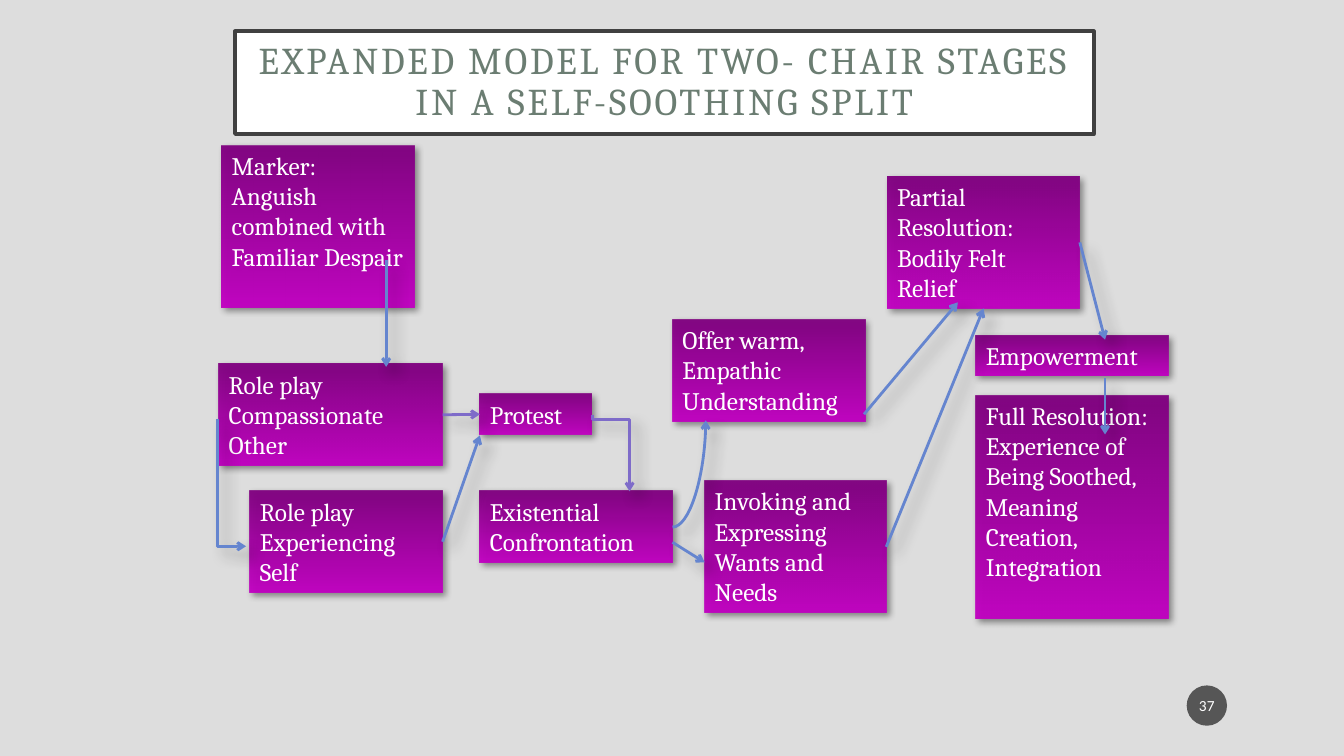
from lxml import etree
from pptx import Presentation
from pptx.dml.color import RGBColor
from pptx.enum.shapes import MSO_CONNECTOR, MSO_SHAPE
from pptx.enum.text import MSO_ANCHOR, MSO_AUTO_SIZE, PP_ALIGN
from pptx.oxml.ns import qn
from pptx.util import Inches, Pt

RECT, OVAL = MSO_SHAPE.RECTANGLE, MSO_SHAPE.OVAL
LINE, ELBOW, CURVE = MSO_CONNECTOR.STRAIGHT, MSO_CONNECTOR.ELBOW, MSO_CONNECTOR.CURVE
MID, TOP = MSO_ANCHOR.MIDDLE, MSO_ANCHOR.TOP
LEFT, CENTER = PP_ALIGN.LEFT, PP_ALIGN.CENTER
FIXED = MSO_AUTO_SIZE.NONE
LEFT_SIDE, RIGHT_SIDE, BOTTOM = 1, 3, 2

HEX = {"back": "DDDDDD", "white": "FFFFFF", "frame": "404040", "title": "6B7D72",
       "dark": "800080", "light": "C100C1", "blue": "6585CF", "violet": "7E6BC9",
       "badge": "1D1D1D", "shadow": "000000"}
RGB = {name: RGBColor.from_string(code) for name, code in HEX.items()}


def write(shape, text, size, color, font, align, anchor, pad):
    """Fill a shape with one formatted paragraph; pad is (side, end) in inches."""
    frame = shape.text_frame
    frame.text = text
    side, end = (Inches(p) for p in pad)
    looks = {"word_wrap": True, "auto_size": FIXED, "vertical_anchor": anchor,
             "margin_left": side, "margin_right": side,
             "margin_top": end, "margin_bottom": end}
    for key, value in looks.items():
        setattr(frame, key, value)
    para = frame.paragraphs[0]
    para.alignment = align
    run = para.runs[0]
    for key, value in {"name": font, "size": Pt(size), "bold": False}.items():
        setattr(run.font, key, value)
    run.font.color.rgb = RGB[color]
    return para


def shade(shape, alpha, blur, dist):
    """Cast a soft shadow down to the right; blur and dist are in points."""
    effects = etree.SubElement(shape._element.spPr, qn("a:effectLst"))
    outer = etree.SubElement(effects, qn("a:outerShdw"), blurRad=str(Pt(blur)),
                             dist=str(Pt(dist)), dir="2700000", algn="tl", rotWithShape="0")
    color = etree.SubElement(outer, qn("a:srgbClr"), val=HEX["shadow"])
    etree.SubElement(color, qn("a:alpha"), val=str(alpha * 1000))


deck = Presentation()
deck.slide_width, deck.slide_height = Inches(13.33), Inches(7.5)
slide = deck.slides.add_slide(deck.slide_layouts[5])
slide.background.fill.solid()
slide.background.fill.fore_color.rgb = RGB["back"]
shapes = slide.shapes

# Title
title = shapes.title
place = {"left": 2.33, "top": 0.31, "width": 8.52, "height": 1.02}
for key, value in place.items():
    setattr(title, key, Inches(value))
title.fill.solid()
title.fill.fore_color.rgb = RGB["white"]
title.line.color.rgb = RGB["frame"]
title.line.width = Pt(2.5)
para = write(title, "EXPANDED MODEL FOR TWO- CHAIR STAGES IN A SELF-SOOTHING SPLIT",
             27, "title", "Cambria", CENTER, MID, (0.2, 0.2))
para.line_spacing = 0.9
para.runs[0].font._element.set("spc", "200")

# Stage boxes: left, top, width, height, text
stages = {
    "marker": (2.2, 1.44, 1.91, 1.61, "Marker: Anguish combined with Familiar Despair"),
    "other": (2.17, 3.61, 2.22, 1.01, "Role play Compassionate Other"),
    "needs": (6.99, 4.77, 1.8, 1.31, "Invoking and Expressing Wants and Needs"),
    "full": (9.68, 3.92, 1.91, 2.22,
             "Full Resolution: Experience of Being Soothed, Meaning Creation, Integration"),
    "self": (2.48, 4.87, 1.91, 1.01, "Role play Experiencing Self"),
    "offer": (6.67, 3.17, 1.91, 1.01, "Offer warm, Empathic Understanding"),
    "power": (9.68, 3.33, 1.91, 0.4, "Empowerment"),
    "partial": (8.8, 1.75, 1.91, 1.31, "Partial Resolution: Bodily Felt Relief"),
    "exist": (4.76, 4.87, 1.91, 0.71, "Existential Confrontation"),
    "protest": (4.76, 3.91, 1.11, 0.4, "Protest"),
}
boxes = {}
for name, (*spot, text) in stages.items():
    box = boxes[name] = shapes.add_shape(RECT, *map(Inches, spot))
    box.fill.gradient()
    box.fill.gradient_angle = 270
    for stop, color, pos in zip(box.fill.gradient_stops, ("dark", "light"), (0, 0.97)):
        stop.color.rgb = RGB[color]
        stop.position = pos
    for color in box._element.spPr.iter(qn("a:srgbClr")):
        etree.SubElement(color, qn("a:alpha"), val="95000")
    box.line.fill.background()
    shade(box, 43, 5, 3)
    write(box, text, 18, "white", "Cambria", LEFT, TOP, (0.1, 0.05))

# Straight arrows: start, end, colour, joined start, joined end
arrows = [
    ((4.39, 5.38), (4.76, 4.32), "blue", ("self", RIGHT_SIDE), None),
    ((3.83, 2.58), (3.83, 3.64), "blue", None, None),
    ((4.39, 4.11), (4.76, 4.11), "violet", ("other", RIGHT_SIDE), ("protest", LEFT_SIDE)),
    ((6.67, 5.38), (6.99, 5.58), "blue", None, None),
    ((8.79, 5.43), (9.75, 3.06), "blue", ("needs", RIGHT_SIDE), ("partial", BOTTOM)),
    ((8.57, 4.11), (9.5, 3), "blue", None, None),
    ((10.71, 2.41), (10.96, 3.37), "blue", ("partial", RIGHT_SIDE), None),
    ((10.96, 3.75), (10.96, 4.31), "blue", None, None),
]
links = []
for start, end, color, tail, head in arrows:
    link = shapes.add_connector(LINE, *map(Inches, start + end))
    if tail:
        link.begin_connect(boxes[tail[0]], tail[1])
    if head:
        link.end_connect(boxes[head[0]], head[1])
    links.append((link, color))

# Bent and curved arrows: kind, left, top, width, height, colour, preset, turn, bend
bends = [
    (ELBOW, 1.67, 4.65, 1.26, 0.28, "blue", "bentConnector2",
     {"rot": "16200000", "flipH": "1"}, None),
    (ELBOW, 5.68, 4.31, 0.76, 0.37, "violet", "bentConnector3",
     {"rot": "16200000", "flipH": "1"}, 6000),
    (CURVE, 6.67, 4.17, 0.33, 1.06, "blue", "curvedConnector2", {"flipV": "1"}, None),
]
for kind, x, y, w, h, color, preset, turn, bend in bends:
    link = shapes.add_connector(kind, *map(Inches, (x, y, x + w, y + h)))
    props = link._element.spPr
    props.find(qn("a:xfrm")).attrib.update(turn)
    shape = props.find(qn("a:prstGeom"))
    shape.set("prst", preset)
    if bend:
        etree.SubElement(shape.find(qn("a:avLst")), qn("a:gd"), name="adj1", fmla=f"val {bend}")
    links.append((link, color))

# Arrow looks
for link, color in links:
    link.line.color.rgb = RGB[color]
    link.line.width = Pt(2)
    etree.SubElement(link._element.spPr.find(qn("a:ln")), qn("a:tailEnd"), type="arrow")
    shade(link, 35, 10.2, 8)

# Page number
badge = shapes.add_shape(OVAL, *map(Inches, (11.77, 6.8, 0.4, 0.4)))
badge.shadow.inherit = False
badge.fill.solid()
badge.fill.fore_color.rgb = RGB["badge"]
color = next(badge._element.spPr.iter(qn("a:srgbClr")))
etree.SubElement(color, qn("a:alpha"), val="70000")
badge.line.fill.background()
write(badge, "37", 11, "white", "Calibri", CENTER, MID, (0.02, 0.05))

deck.save("out.pptx")
